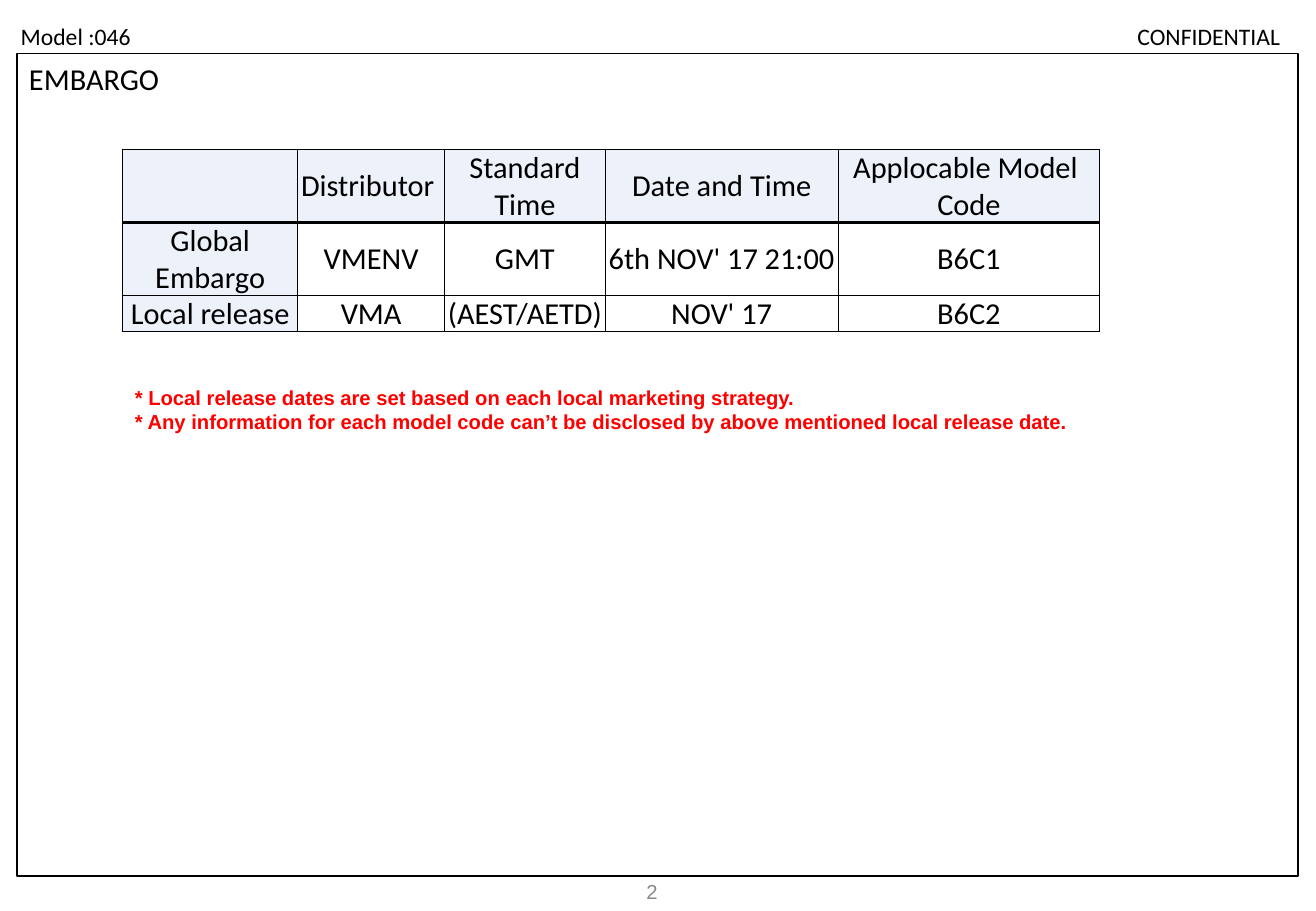
"""Build the embargo slide: page frame, release schedule table and disclosure notes."""
from dataclasses import dataclass

from lxml.etree import SubElement
from pptx import Presentation
from pptx.dml.color import RGBColor
from pptx.enum.shapes import MSO_SHAPE
from pptx.enum.text import MSO_ANCHOR, PP_ALIGN
from pptx.oxml.ns import qn
from pptx.slide import Slide
from pptx.table import _Cell
from pptx.text.text import _Paragraph
from pptx.util import Emu, Pt


@dataclass(frozen=True)
class Theme:
    black: str = "000000"
    red: str = "FF0000"
    grey: str = "898989"
    heading_fill: str = "EDF1F9"
    body_font: str = "Calibri"
    note_font: str = "Arial"
    large: int = 18
    medium: int = 14
    small: int = 12


@dataclass(frozen=True)
class Label:
    lines: tuple[str, ...]
    left: int
    top: int
    width: int
    height: int
    size: int
    font: str
    color: str
    bold: bool = False
    align: PP_ALIGN = PP_ALIGN.LEFT
    anchor: MSO_ANCHOR = MSO_ANCHOR.TOP
    inset_x: int = 0
    inset_y: int = 0


THEME = Theme()
EMU_PER_PX = 9144

LABELS = (
    Label(("EMBARGO",), 14, 44, 458, 41, THEME.large, THEME.body_font, THEME.black,
          anchor=MSO_ANCHOR.MIDDLE, inset_x=10, inset_y=5),
    Label(("Model :046",), 17, 18, 175, 27, THEME.medium, THEME.body_font, THEME.black),
    Label(("CONFIDENTIAL ",), 900, 18, 158, 25, THEME.medium, THEME.body_font,
          THEME.black, align=PP_ALIGN.RIGHT),
    Label(("2",), 298, 714, 253, 40, THEME.small, THEME.note_font, THEME.grey,
          align=PP_ALIGN.RIGHT, anchor=MSO_ANCHOR.MIDDLE, inset_x=10, inset_y=5),
    Label(("* Local release dates are set based on each local marketing strategy.",
           "* Any information for each model code can’t be disclosed by above "
           "mentioned local release date."),
          111, 312, 783, 51, THEME.small, THEME.note_font, THEME.red, bold=True, inset_y=5),
)

SCHEDULE = (
    ("", "Distributor ", "Standard\nTime", "Date and Time", "Applocable Model \nCode"),
    ("Global Embargo", "VMENV", "GMT", "6th NOV' 17 21:00", "B6C1"),
    ("Local release", "VMA", "(AEST/AETD)", "NOV' 17", "B6C2"),
)
COLUMN_WIDTHS = (144, 121, 132, 192, 215)
ROW_HEIGHTS = (60, 60, 30)
COLUMN_RULES = (1, 0.5, 0.5, 0.5, 0.5, 1)
ROW_RULES = (1, 2, 0.5, 1)


def px(length: int) -> Emu:
    """Turn px into EMU."""
    return Emu(length * EMU_PER_PX)


def style_paragraph(paragraph: _Paragraph, size: int, font: str, color: str,
                    bold: bool, align: PP_ALIGN) -> None:
    """Set the type and alignment of a paragraph."""
    paragraph.alignment = align
    paragraph.font.size = Pt(size)
    paragraph.font.name = font
    paragraph.font.bold = bold
    paragraph.font.color.rgb = RGBColor.from_string(color)


def draw_label(slide: Slide, label: Label) -> None:
    """Add a text box with one paragraph per line."""
    box = slide.shapes.add_textbox(px(label.left), px(label.top),
                                   px(label.width), px(label.height))
    frame = box.text_frame
    frame.word_wrap = True
    frame.vertical_anchor = label.anchor
    frame.margin_left = frame.margin_right = px(label.inset_x)
    frame.margin_top = frame.margin_bottom = px(label.inset_y)
    frame.text = "\n".join(label.lines)
    for paragraph in frame.paragraphs:
        style_paragraph(paragraph, label.size, label.font, label.color,
                        label.bold, label.align)


def draw_page_frame(slide: Slide) -> None:
    """Outline the page area."""
    border = slide.shapes.add_shape(MSO_SHAPE.RECTANGLE, px(14), px(44), px(1054), px(677))
    border.shadow.inherit = False
    border.fill.background()
    border.line.color.rgb = RGBColor.from_string(THEME.black)
    border.line.width = Pt(1)


def rule_cell(cell: _Cell, row: int, column: int) -> None:
    """Draw the four borders of a cell from the table's rule weights."""
    properties = cell._tc.get_or_add_tcPr()
    weights = {"a:lnL": COLUMN_RULES[column], "a:lnR": COLUMN_RULES[column + 1],
               "a:lnT": ROW_RULES[row], "a:lnB": ROW_RULES[row + 1]}
    for tag, weight in weights.items():
        line = SubElement(properties, qn(tag), w=str(int(Pt(weight))))
        SubElement(SubElement(line, qn("a:solidFill")), qn("a:srgbClr"), val=THEME.black)


def draw_schedule(slide: Slide) -> None:
    """Add the release schedule table."""
    table = slide.shapes.add_table(len(SCHEDULE), len(COLUMN_WIDTHS), px(101), px(123),
                                   px(sum(COLUMN_WIDTHS)), px(sum(ROW_HEIGHTS))).table
    table.first_row = table.horz_banding = False
    for column, width in enumerate(COLUMN_WIDTHS):
        table.columns[column].width = px(width)
    for row, entries in enumerate(SCHEDULE):
        table.rows[row].height = px(ROW_HEIGHTS[row])
        for column, entry in enumerate(entries):
            cell = table.cell(row, column)
            cell.margin_left = cell.margin_right = cell.margin_top = cell.margin_bottom = 0
            cell.vertical_anchor = MSO_ANCHOR.MIDDLE
            paragraph = cell.text_frame.paragraphs[0]
            paragraph.text = entry
            style_paragraph(paragraph, THEME.large, THEME.body_font, THEME.black,
                            False, PP_ALIGN.CENTER)
            rule_cell(cell, row, column)
            if row == 0 or column == 0:
                cell.fill.solid()
                cell.fill.fore_color.rgb = RGBColor.from_string(THEME.heading_fill)
            else:
                cell.fill.background()


def main() -> None:
    """Build and save the slide."""
    presentation = Presentation()
    presentation.slide_width, presentation.slide_height = px(1083), px(750)
    slide = presentation.slides.add_slide(presentation.slide_layouts[6])
    draw_page_frame(slide)
    for label in LABELS:
        draw_label(slide, label)
    draw_schedule(slide)
    presentation.save("out.pptx")


if __name__ == "__main__":
    main()
